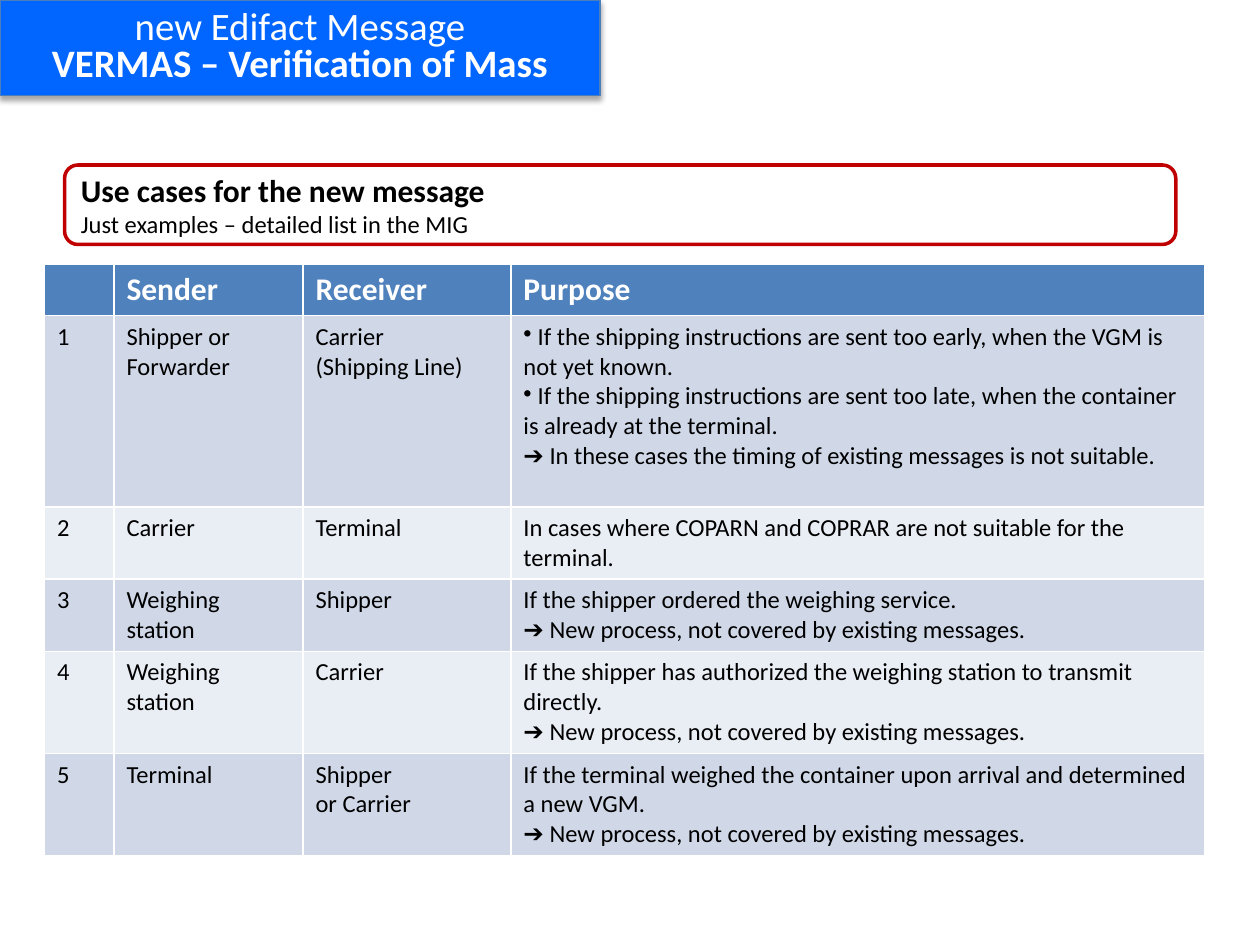
"""Build the VERMAS use case slide."""
from lxml import etree
from pptx import Presentation
from pptx.dml.color import RGBColor
from pptx.enum.shapes import MSO_SHAPE
from pptx.enum.text import MSO_ANCHOR, MSO_AUTO_SIZE, PP_ALIGN
from pptx.oxml import parse_xml
from pptx.oxml.ns import qn
from pptx.util import Pt

ROUND = MSO_SHAPE.ROUNDED_RECTANGLE
MIDDLE = MSO_ANCHOR.MIDDLE
FIXED = MSO_AUTO_SIZE.NONE
LEFT, CENTER = PP_ALIGN.LEFT, PP_ALIGN.CENTER

WHITE = RGBColor(0xFF, 0xFF, 0xFF)
BLACK = RGBColor(0, 0, 0)
BLUE = RGBColor(0x00, 0x66, 0xFF)
EDGE = RGBColor(0x4B, 0x7E, 0xBC)
RED = RGBColor(0xC0, 0, 0)
HEAD = RGBColor(0x4F, 0x81, 0xBD)
BANDS = RGBColor(0xE9, 0xED, 0xF4), RGBColor(0xD0, 0xD8, 0xE8)
FONT = "Calibri"
BULLET = "•"

TITLE = "new Edifact Message\vVERMAS – Verification of Mass"
INTRO = "Use cases for the new message\nJust examples – detailed list in the MIG"
NEW = "➔ New process, not covered by existing messages."
ROWS = [
    ("", "Sender", "Receiver", "Purpose"),
    ("1", "Shipper or Forwarder", "Carrier\v(Shipping Line)",
     "• If the shipping instructions are sent too early, when the VGM is not yet known.\n"
     "• If the shipping instructions are sent too late, when the container is already at the terminal.\n"
     "➔ In these cases the timing of existing messages is not suitable."),
    ("2", "Carrier", "Terminal",
     "In cases where COPARN and COPRAR are not suitable for the terminal."),
    ("3", "Weighing station", "Shipper",
     "If the shipper ordered the weighing service.\n" + NEW),
    ("4", "Weighing station", "Carrier",
     "If the shipper has authorized the weighing station to transmit directly.\n" + NEW),
    ("5", "Terminal", "Shipper\nor Carrier",
     "If the terminal weighed the container upon arrival and determined a new VGM.\n" + NEW),
]
WIDTHS = 39.6, 108, 118.8, 396.7
HEIGHTS = 29.2, 109.2, 41.3, 41.3, 58.3, 58.3

SHADOW = (
    '<a:effectLst xmlns:a="http://schemas.openxmlformats.org/drawingml/2006/main">'
    '<a:outerShdw blurRad="39370" dist="22860" dir="5400000" rotWithShape="0">'
    '<a:srgbClr val="000000"><a:alpha val="35000"/></a:srgbClr>'
    '</a:outerShdw></a:effectLst>'
)


def style(runs, size, color, bold):
    for run in runs:
        font = run.font
        font.name, font.size, font.bold = FONT, Pt(size), bold
        font.color.rgb = color


def place(shape, left, top, width, height):
    shape.left, shape.top = Pt(left), Pt(top)
    shape.width, shape.height = Pt(width), Pt(height)


def paint(shape, fill, line, weight):
    shape.fill.solid()
    shape.fill.fore_color.rgb = fill
    shape.line.color.rgb = line
    shape.line.width = Pt(weight)


def add_title(slide):
    title = slide.shapes.title
    place(title, 0, 0, 342.9, 54.8)
    paint(title, BLUE, EDGE, 0.75)
    title._element.spPr.append(parse_xml(SHADOW))
    frame = title.text_frame
    frame.text = TITLE
    frame.auto_size, frame.vertical_anchor = FIXED, MIDDLE
    para = frame.paragraphs[0]
    para.alignment, para.line_spacing = CENTER, 0.8
    style(para.runs, 22.2, WHITE, False)
    para.runs[-1].font.bold = True


def add_intro(slide):
    box = slide.shapes.add_shape(ROUND, Pt(36.9), Pt(94.3), Pt(635), Pt(45.4))
    box.shadow.inherit = False
    paint(box, WHITE, RED, 2)
    frame = box.text_frame
    frame.text = INTRO
    frame.word_wrap, frame.vertical_anchor = True, MIDDLE
    for para, size, bold in zip(frame.paragraphs, (18, 14), (True, False)):
        para.alignment = LEFT
        style(para.runs, size, BLACK, bold)


def add_bullet(para):
    para.text = para.text.removeprefix(BULLET)
    props = para._p.get_or_add_pPr()
    props.set("marL", "0")
    props.set("indent", "0")
    etree.SubElement(props, qn("a:buChar")).set("char", BULLET)


def fill_cell(cell, text, row):
    cell.fill.solid()
    cell.fill.fore_color.rgb = BANDS[row % 2] if row else HEAD
    cell.text_frame.text = text
    for para in cell.text_frame.paragraphs:
        if para.text.startswith(BULLET):
            add_bullet(para)
        if row:
            style(para.runs, 14, BLACK, False)
        else:
            style(para.runs, 18, WHITE, True)


def add_cases(slide):
    table = slide.shapes.add_table(
        len(ROWS), len(WIDTHS), Pt(25.5), Pt(151.2),
        Pt(sum(WIDTHS)), Pt(sum(HEIGHTS))).table
    for col, width in zip(table.columns, WIDTHS):
        col.width = Pt(width)
    for row, height in zip(table.rows, HEIGHTS):
        row.height = Pt(height)
    for i, texts in enumerate(ROWS):
        for j, text in enumerate(texts):
            fill_cell(table.cell(i, j), text, i)


def main():
    deck = Presentation()
    deck.slide_width, deck.slide_height = Pt(720), Pt(540)
    slide = deck.slides.add_slide(deck.slide_layouts[5])
    add_cases(slide)
    add_intro(slide)
    add_title(slide)
    deck.save("out.pptx")


if __name__ == "__main__":
    main()
